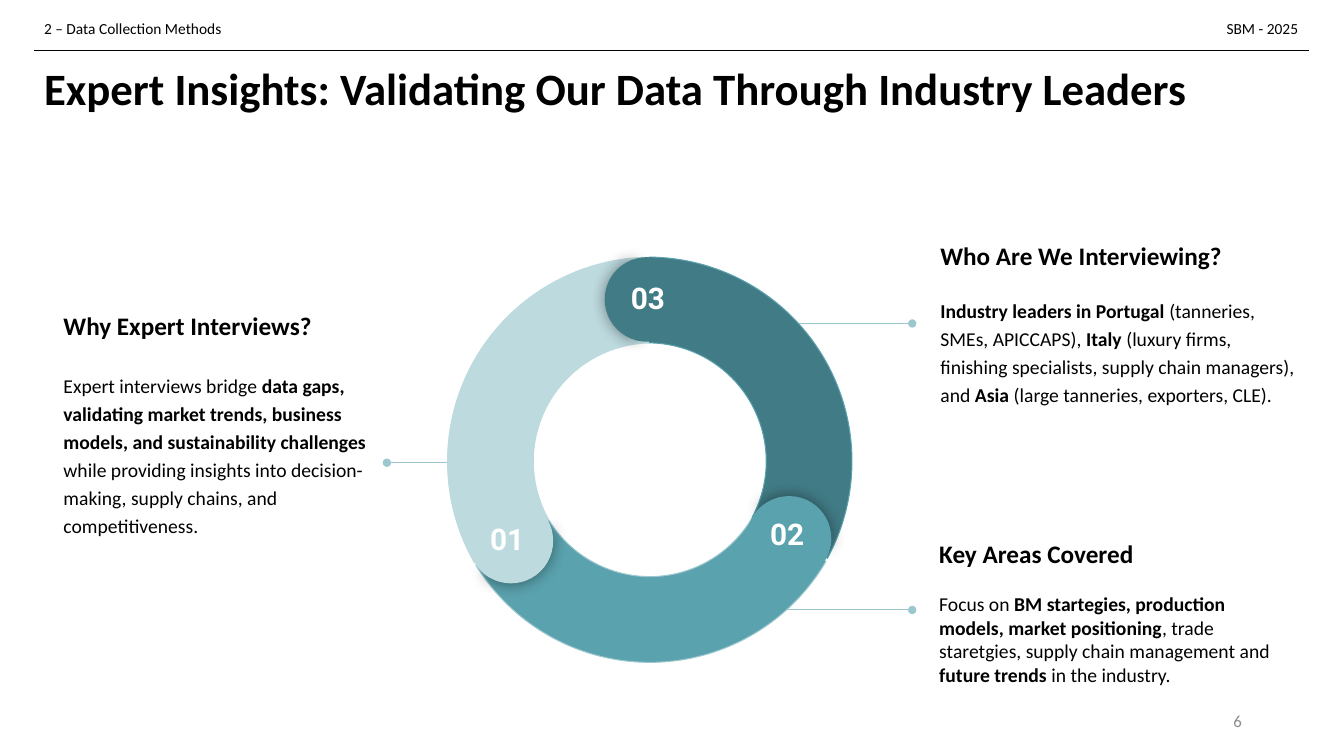
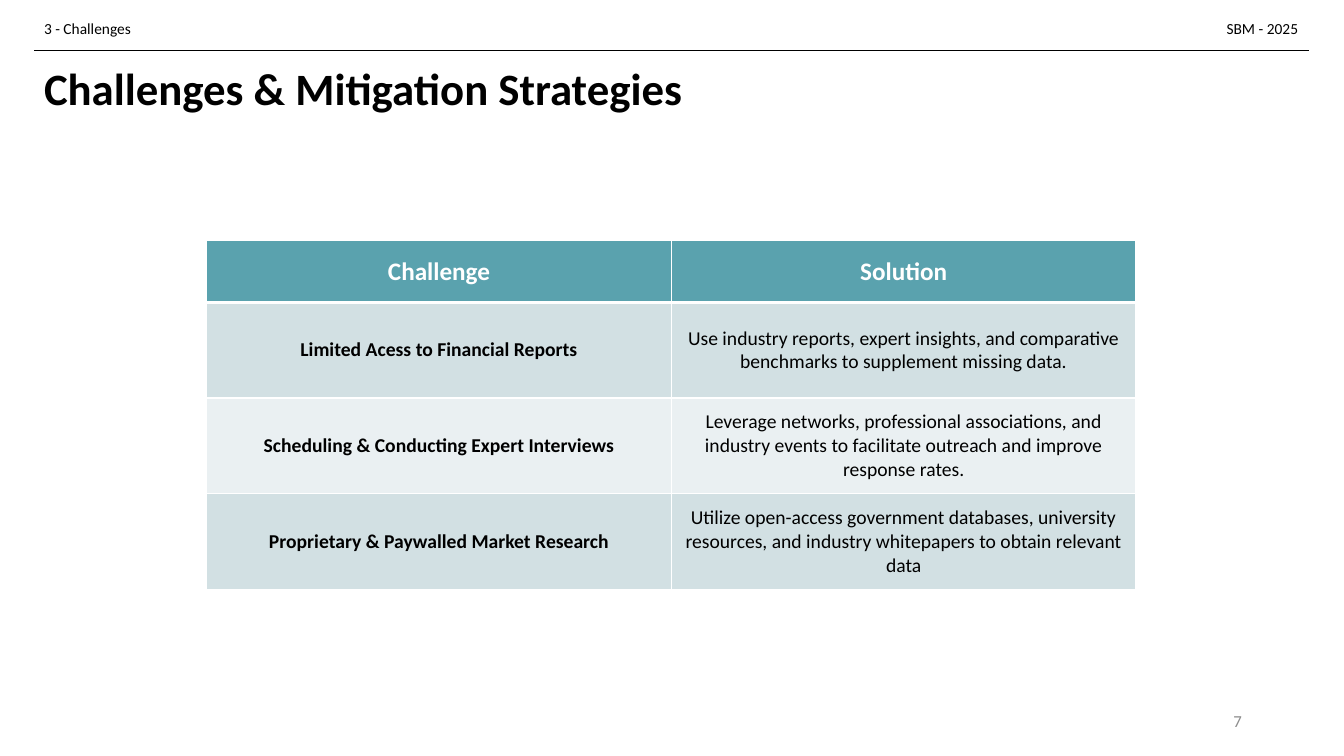
"""Build two slides on expert interviews and on challenges with their solutions."""
from dataclasses import dataclass

from lxml import etree
from pptx import Presentation
from pptx import util as u
from pptx.dml.color import RGBColor
from pptx.enum import shapes, text
from pptx.oxml.ns import qn

Cm, Pt = u.Cm, u.Pt
LEFT, CENTER, RIGHT = text.PP_ALIGN.LEFT, text.PP_ALIGN.CENTER, text.PP_ALIGN.RIGHT
TOP, MIDDLE = text.MSO_ANCHOR.TOP, text.MSO_ANCHOR.MIDDLE


@dataclass(frozen=True)
class Theme:
    """Colours, fonts and type sizes."""
    black: str = "000000"
    white: str = "FFFFFF"
    grey: str = "8C8C8C"
    dark: str = "417B85"
    teal: str = "5AA2AE"
    pale: str = "BDDADF"
    leader: str = "9CC7CE"
    bands: tuple[str, str] = ("D2E0E3", "EAF0F2")
    font: str = "Calibri"
    number_font: str = "Roboto"
    title: float = 32
    number: float = 21.3
    heading: float = 18
    body: float = 14
    page: float = 12
    header: float = 11


@dataclass(frozen=True)
class Box:
    """A frame in centimetres."""
    x: float
    y: float
    w: float
    h: float

    def emu(self) -> tuple[int, int, int, int]:
        """Return the frame as lengths."""
        return Cm(self.x), Cm(self.y), Cm(self.w), Cm(self.h)


@dataclass(frozen=True)
class Segment:
    """One third of the ring with its round cap and number."""
    number: str
    turn: float
    fill: str
    line: str
    arc: Box
    cap: Box
    label: Box


@dataclass(frozen=True)
class Callout:
    """A heading with its text and the leader line beside it."""
    heading: str
    body: str
    box: Box
    gap: float
    heading_pitch: float | None
    body_pitch: float | None
    leader: tuple[float, float, float]


T = Theme()
RING, CAP = 10.29, 2.13
ARC_ADJ = (126.22, 197.03, 0.21)
BACK_CAP_ADJ = (61.9, 149.96)
FRONT_CAP_ADJ = (40.28, 171.84)

SEGMENTS = [
    Segment("03", 60, T.dark, T.teal, Box(11.18, 6.48, RING, RING),
            Box(15.24, 6.48, CAP, CAP), Box(15.39, 6.73, 1.88, 0.99)),
    Segment("02", 180, T.teal, T.leader, Box(11.23, 6.4, RING, RING),
            Box(18.82, 12.5, CAP, CAP), Box(18.9, 12.67, 1.88, 0.99)),
    Segment("01", 300, T.pale, T.pale, Box(11.28, 6.48, RING, RING),
            Box(11.81, 12.57, CAP, CAP), Box(11.84, 12.78, 1.88, 0.99)),
]

CALLOUTS = [
    Callout("Why Expert Interviews?",
            "Expert interviews bridge **data gaps, validating market trends, business models, "
            "and sustainability challenges **while providing insights into decision-making, "
            "supply chains, and competitiveness.",
            Box(1.27, 7.56, 8.56, 6.3), 20, 20, 20, (12.09, 9.75, 11.66)),
    Callout("Who Are We Interviewing?",
            "**Industry leaders in Portugal **(tanneries, SMEs, APICCAPS), **Italy** (luxury "
            "firms, finishing specialists, supply chain managers), and **Asia **(large "
            "tanneries, exporters, CLE).",
            Box(23.37, 5.77, 9.63, 4.78), 17, None, 20, (19.25, 22.99, 8.15)),
    Callout("Key Areas Covered",
            "Focus on **BM startegies, production models, market positioning**, trade "
            "staretgies, supply chain management and **future trends **in the industry.",
            Box(23.34, 13.03, 9.3, 4.78), 17, None, None, (19.25, 22.99, 15.37)),
]

CHALLENGES = [
    ("Limited Acess to Financial Reports",
     "Use industry reports, expert insights, and comparative benchmarks to supplement "
     "missing data."),
    ("Scheduling & Conducting Expert Interviews",
     "Leverage networks, professional associations, and industry events to facilitate "
     "outreach and improve response rates."),
    ("Proprietary & Paywalled Market Research",
     "Utilize open-access government databases, university resources, and industry "
     "whitepapers to obtain relevant data"),
]


def rgb(color: str) -> RGBColor:
    """Turn a hex string into a colour."""
    return RGBColor.from_string(color)


def write(tf, content: str, *, size: float, color: str = T.black, font: str = T.font,
          bold: bool = False, align=LEFT, pitch: float | None = None,
          before: float | None = None) -> None:
    """Add a paragraph in which ** switches bold on and off."""
    p = tf.paragraphs[0]
    if p.runs:
        p = tf.add_paragraph()
    p.alignment = align
    if pitch is not None:
        p.line_spacing = Pt(pitch) if pitch > 3 else pitch
    if before is not None:
        p.space_before = Pt(before)
    for i, part in enumerate(content.split("**")):
        if part:
            r = p.add_run()
            r.text = part
            r.font.name, r.font.size = font, Pt(size)
            r.font.bold = bold or i % 2 == 1
            r.font.color.rgb = rgb(color)


def add_frame(slide, box: Box, *, anchor=TOP, inset: float | None = None, wrap: bool = True):
    """Add a text box and return its text frame."""
    tf = slide.shapes.add_textbox(*box.emu()).text_frame
    tf.word_wrap, tf.vertical_anchor = wrap, anchor
    if inset is not None:
        tf.margin_left = tf.margin_right = tf.margin_top = tf.margin_bottom = Cm(inset)
    return tf


def add_line(slide, x1: float, x2: float, y: float, color: str, width: float,
             dot: bool = False) -> None:
    """Draw a level line, with a dot at its end on request."""
    s = slide.shapes.add_connector(shapes.MSO_CONNECTOR.STRAIGHT, Cm(x1), Cm(y), Cm(x2), Cm(y))
    s.line.color.rgb, s.line.width = rgb(color), Pt(width)
    sp = s.element.spPr
    if dot:
        etree.SubElement(sp.find(qn("a:ln")), qn("a:tailEnd"), type="oval")
    etree.SubElement(sp, qn("a:effectLst"))


def add_piece(slide, kind, box: Box, turn: float, adj: tuple[float, ...], fill: str,
              line: str | None = None, shadow: bool = False) -> None:
    """Draw one rotated part of the ring."""
    s = slide.shapes.add_shape(kind, *box.emu())
    s.rotation = turn
    for i, value in enumerate(adj):
        s.adjustments[i] = value
    s.fill.solid()
    s.fill.fore_color.rgb = rgb(fill)
    if line:
        s.line.color.rgb, s.line.width = rgb(line), Pt(0.75)
    else:
        s.line.fill.background()
    s.shadow.inherit = False
    if shadow:
        effects = s.element.spPr.find(qn("a:effectLst"))
        outer = etree.SubElement(effects, qn("a:outerShdw"), blurRad=str(Pt(11.2)),
                                 dist="0", dir="0", algn="ctr", rotWithShape="0")
        clr = etree.SubElement(outer, qn("a:srgbClr"), val=T.black)
        etree.SubElement(clr, qn("a:alpha"), val="43000")


def add_base(prs, section: str, title: str, page: int):
    """Add a slide with header, rule, title and page number."""
    slide = prs.slides.add_slide(prs.slide_layouts[6])
    write(add_frame(slide, Box(0.86, 1.55, 32.13, 2.82)), title,
          size=T.title, bold=True, pitch=0.9)
    write(add_frame(slide, Box(23.93, 17.65, 7.62, 1.02), anchor=MIDDLE), str(page),
          size=T.page, color=T.grey, align=RIGHT)
    add_line(slide, 0.86, 32.99, 1.27, T.black, 0.25)
    for x, w, label in ((30.66, 2.36, "SBM - 2025"), (0.86, 5.59, section)):
        write(add_frame(slide, Box(x, 0.36, w, 0.74), wrap=False), label, size=T.header)
    return slide


def add_callout(slide, c: Callout) -> None:
    """Draw a callout and its leader line."""
    tf = add_frame(slide, c.box, anchor=MIDDLE, inset=0.33)
    write(tf, c.heading, size=T.heading, bold=True, pitch=c.heading_pitch)
    write(tf, c.body, size=T.body, pitch=c.body_pitch, before=c.gap)
    add_line(slide, *c.leader, T.leader, 0.75, dot=True)


def add_ring(slide) -> None:
    """Draw the ring, its caps and its numbers."""
    kinds = shapes.MSO_SHAPE
    for g in SEGMENTS:
        add_piece(slide, kinds.BLOCK_ARC, g.arc, g.turn, ARC_ADJ, g.fill, g.line)
    for g in SEGMENTS:
        add_piece(slide, kinds.PIE, g.cap, g.turn - 59.35, BACK_CAP_ADJ, g.fill, shadow=True)
        add_piece(slide, kinds.PIE, g.cap, (g.turn + 120) % 360, FRONT_CAP_ADJ, g.fill)
        write(add_frame(slide, g.label, inset=0.33, wrap=False), g.number, size=T.number,
              color=T.white, font=T.number_font, bold=True, align=CENTER)


def style_cell(cell, fill: str, top: float, bottom: float) -> None:
    """Fill a cell and give it white borders."""
    cell.vertical_anchor = MIDDLE
    cell.fill.solid()
    cell.fill.fore_color.rgb = rgb(fill)
    tc_pr = cell._tc.get_or_add_tcPr()
    for i, (side, width) in enumerate((("L", 1), ("R", 1), ("T", top), ("B", bottom))):
        ln = etree.Element(qn(f"a:ln{side}"), w=str(Pt(width)))
        solid = etree.SubElement(ln, qn("a:solidFill"))
        etree.SubElement(solid, qn("a:srgbClr"), val=T.white)
        tc_pr.insert(i, ln)


def add_challenges(slide) -> None:
    """Draw the table of challenges and solutions."""
    rows = [("Challenge", "Solution"), *CHALLENGES]
    box = Box(5.21, 6.07, 23.42, 8.78)
    tbl = slide.shapes.add_table(len(rows), 2, *box.emu()).table
    for col in tbl.columns:
        col.width = Cm(box.w / 2)
    for i, row in enumerate(rows):
        head = i == 0
        tbl.rows[i].height = Cm(1.55 if head else 2.41)
        for j, content in enumerate(row):
            cell = tbl.cell(i, j)
            style_cell(cell, T.teal if head else T.bands[(i - 1) % 2],
                       top=3 if i == 1 else 1, bottom=3 if head else 1)
            write(cell.text_frame, content, size=T.heading if head else T.body,
                  color=T.white if head else T.black, bold=head or j == 0, align=CENTER)


def main() -> None:
    """Build and save the presentation."""
    prs = Presentation()
    prs.slide_width, prs.slide_height = Cm(33.87), Cm(19.05)
    s = add_base(prs, "2 – Data Collection Methods",
                 "Expert Insights: Validating Our Data Through Industry Leaders", 6)
    for c in CALLOUTS:
        add_callout(s, c)
    add_ring(s)
    s = add_base(prs, "3 - Challenges", "Challenges & Mitigation Strategies", 7)
    add_challenges(s)
    prs.save("out.pptx")


if __name__ == "__main__":
    main()
